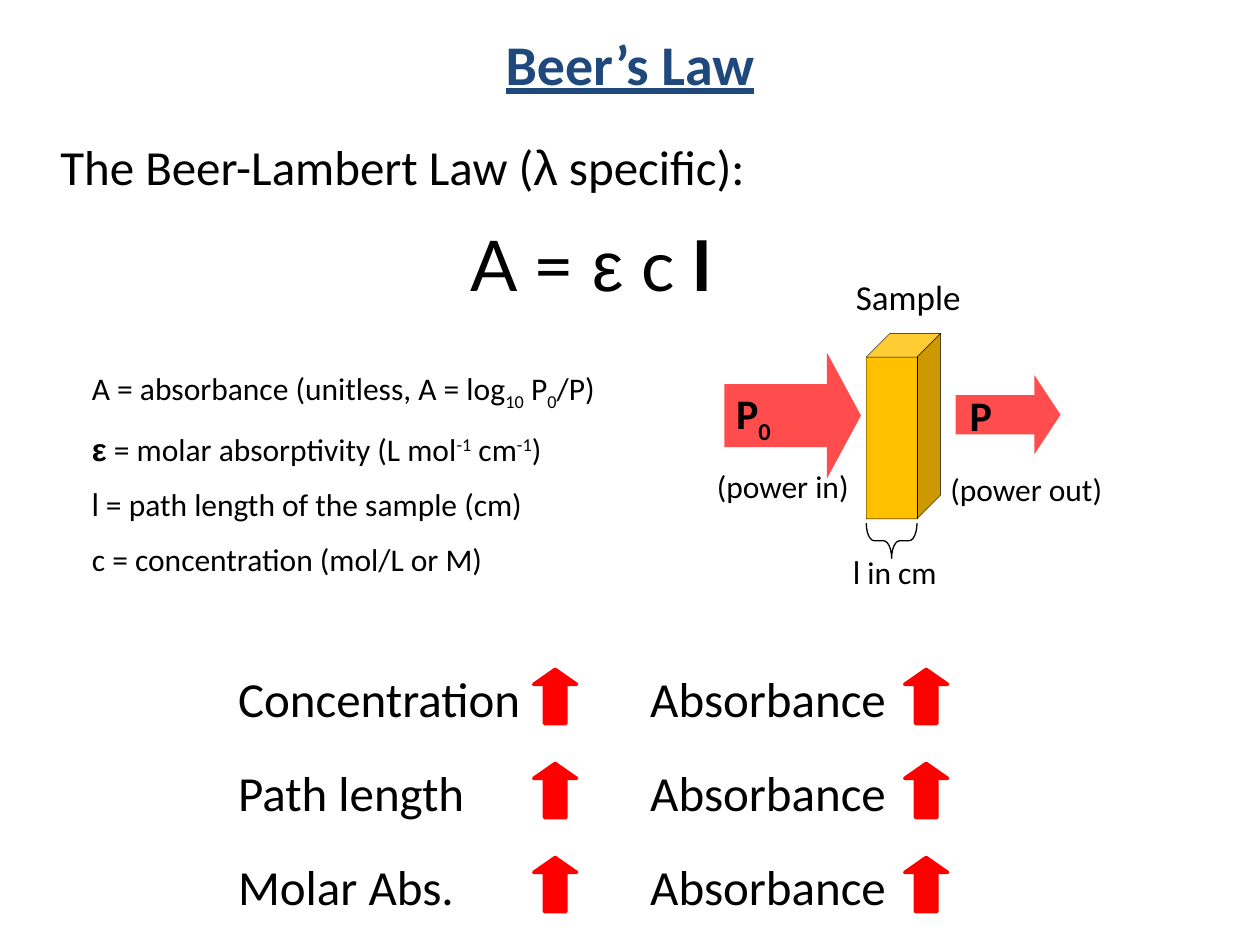
from lxml import etree
from pptx import Presentation
from pptx.dml.color import RGBColor
from pptx.enum.shapes import MSO_SHAPE
from pptx.enum.text import MSO_ANCHOR, MSO_AUTO_SIZE, PP_ALIGN
from pptx.oxml.ns import qn
from pptx.util import Pt

RIGHT_ARROW = MSO_SHAPE.RIGHT_ARROW
UP_ARROW = MSO_SHAPE.UP_ARROW
CUBE = MSO_SHAPE.CUBE
LEFT_BRACE = MSO_SHAPE.LEFT_BRACE
TOP, MIDDLE = MSO_ANCHOR.TOP, MSO_ANCHOR.MIDDLE
LEFT, CENTER = PP_ALIGN.LEFT, PP_ALIGN.CENTER
NO_AUTOFIT = MSO_AUTO_SIZE.NONE

BLACK, RED, AMBER, NAVY = "000000", "FF0000", "FFC000", "1F497D"

# Run styles that differ from the default
SUB = {"baseline": -25}
SUPER = {"baseline": 30}
SYMBOL = {"font": "Arial"}
BOLD_SYMBOL = {"font": "Arial", "bold": True}
FORMULA = {"font": "Lato"}


def rgb(hex_color):
    return RGBColor.from_string(hex_color)


class SlideBuilder:
    font = "Calibri"
    two_content_layout = 3

    def __init__(self, prs):
        layout = prs.slide_layouts[self.two_content_layout]
        self.slide = prs.slides.add_slide(layout)

    def place(self, shape, box):
        shape.left, shape.top, shape.width, shape.height = map(Pt, box)

    def add_runs(self, paragraph, runs, size, color=BLACK, bold=False):
        """Fill a paragraph with (text, style) runs."""
        for text, style in runs:
            run = paragraph.add_run()
            run.text = text
            run.font.size = Pt(size)
            run.font.name = style.get("font", self.font)
            run.font.bold = style.get("bold", bold)
            run.font.color.rgb = rgb(color)
            if "baseline" in style:
                properties = run._r.get_or_add_rPr()
                properties.set("baseline", str(style["baseline"] * 1000))

    def title(self, text, box):
        title = self.slide.shapes.title
        self.place(title, box)
        frame = title.text_frame
        frame.auto_size = NO_AUTOFIT
        frame.vertical_anchor = MIDDLE
        frame.text = text
        paragraph = frame.paragraphs[0]
        paragraph.alignment = CENTER
        font = paragraph.runs[0].font
        font.name, font.size = self.font, Pt(32)
        font.bold = font.underline = True
        font.color.rgb = rgb(NAVY)

    def body(self, index, box, lines, size, margin, hanging, space_after=0):
        """Fill a body placeholder with unbulleted, hanging lines."""
        body = self.slide.placeholders[index]
        self.place(body, box)
        frame = body.text_frame
        frame.auto_size = NO_AUTOFIT
        frame.vertical_anchor = TOP
        frame.margin_left = frame.margin_right = 0
        frame.margin_top = frame.margin_bottom = 0
        for number, runs in enumerate(lines):
            paragraph = frame.add_paragraph() if number else frame.paragraphs[0]
            properties = paragraph._p.get_or_add_pPr()
            properties.set("marL", str(Pt(margin)))
            properties.set("indent", str(Pt(-hanging)))
            etree.SubElement(properties, qn("a:buNone"))
            paragraph.space_before = Pt(0)
            paragraph.space_after = Pt(space_after)
            self.add_runs(paragraph, runs, size)

    def label(self, box, runs, size, bold=False, align=LEFT):
        label = self.slide.shapes.add_textbox(*map(Pt, box))
        label.text_frame.word_wrap = True
        paragraph = label.text_frame.paragraphs[0]
        paragraph.alignment = align
        self.add_runs(paragraph, runs, size, bold=bold)

    def shape(self, kind, box, adjustments, fill=None, opacity=100,
              line=None, line_width=1, rotation=0):
        shape = self.slide.shapes.add_shape(kind, *map(Pt, box))
        shape.shadow.inherit = False
        shape.rotation = rotation
        for index, value in enumerate(adjustments):
            shape.adjustments[index] = value
        if fill:
            shape.fill.solid()
            shape.fill.fore_color.rgb = rgb(fill)
            if opacity < 100:
                color = shape._element.spPr.find(".//" + qn("a:srgbClr"))
                etree.SubElement(color, qn("a:alpha"), val=str(opacity * 1000))
        else:
            shape.fill.background()
        if line:
            shape.line.color.rgb = rgb(line)
            shape.line.width = Pt(line_width)
        else:
            shape.line.fill.background()


def add_law(page):
    page.title("Beer’s Law", (36, 0, 648, 72))
    law = [[("The Beer-Lambert Law (", {}), ("λ", SYMBOL), (" specific):", {})]]
    page.body(1, (34.5, 78, 648, 40), law, 28, margin=27, hanging=27)
    definitions = [
        [("A = absorbance (unitless, A = log", {}), ("10", SUB), (" P", {}),
         ("0", SUB), ("/P)", {})],
        [("ε", BOLD_SYMBOL), (" = molar absorptivity (L mol", {}),
         ("-1", SUPER), (" cm", {}), ("-1", SUPER), (")", {})],
        [("l", SYMBOL), (" = path length of the sample (cm)", {})],
        [("c = concentration (mol/L or M)", {})],
    ]
    page.body(2, (16.5, 211, 364, 130), definitions, 18,
              margin=58.5, hanging=22.5, space_after=10)
    formula = [("A = ", FORMULA), ("ε", SYMBOL), (" c ", FORMULA),
               ("l", BOLD_SYMBOL)]
    page.label((262, 123, 180, 56), formula, 40)


def add_light_path(page):
    page.shape(RIGHT_ARROW, (414, 201.5, 78, 72), (0.5, 0.27), RED, opacity=70)
    page.shape(RIGHT_ARROW, (546, 214.5, 60, 45), (0.5, 0.33), RED, opacity=70)
    page.label((413.5, 218, 40, 55), [("P", {}), ("0", SUB)], 24, bold=True)
    page.label((547, 219, 30, 55), [("P", {})], 24, bold=True)
    page.shape(CUBE, (495, 190.5, 42.5, 106), (0.32,), AMBER,
               line=BLACK, line_width=0.25)
    page.label((471.5, 154, 95, 32), [("Sample", {})], 20, align=CENTER)
    page.label((402.5, 263.5, 93, 29), [("(power in)", {})], 18)
    page.label((536, 265, 105, 29), [("(power out)", {})], 18)
    page.shape(LEFT_BRACE, (499.5, 294.5, 20, 29), (0.23, 0.5),
               line=BLACK, line_width=0.75, rotation=270)
    page.label((480.5, 312.5, 66, 29), [("l", SYMBOL), (" in cm", {})], 18)


def add_proportions(page):
    """Each factor rises together with the absorbance."""
    first_top, pitch = 378.5, 53.75
    for row, factor in enumerate(("Concentration", "Path length", "Molar Abs.")):
        top = first_top + row * pitch
        for text, left, width, arrow_left in (
            (factor, 129, 191, 305), ("Absorbance", 364.5, 160, 517),
        ):
            page.label((left, top, width, 41), [(text, {})], 28)
            page.shape(UP_ARROW, (arrow_left, top + 4, 24.5, 31), (0.5, 0.35),
                       RED, line=RED, line_width=2)


def main():
    prs = Presentation()
    prs.slide_width, prs.slide_height = Pt(720), Pt(540)
    page = SlideBuilder(prs)
    add_law(page)
    add_light_path(page)
    add_proportions(page)
    prs.save("out.pptx")


if __name__ == "__main__":
    main()
